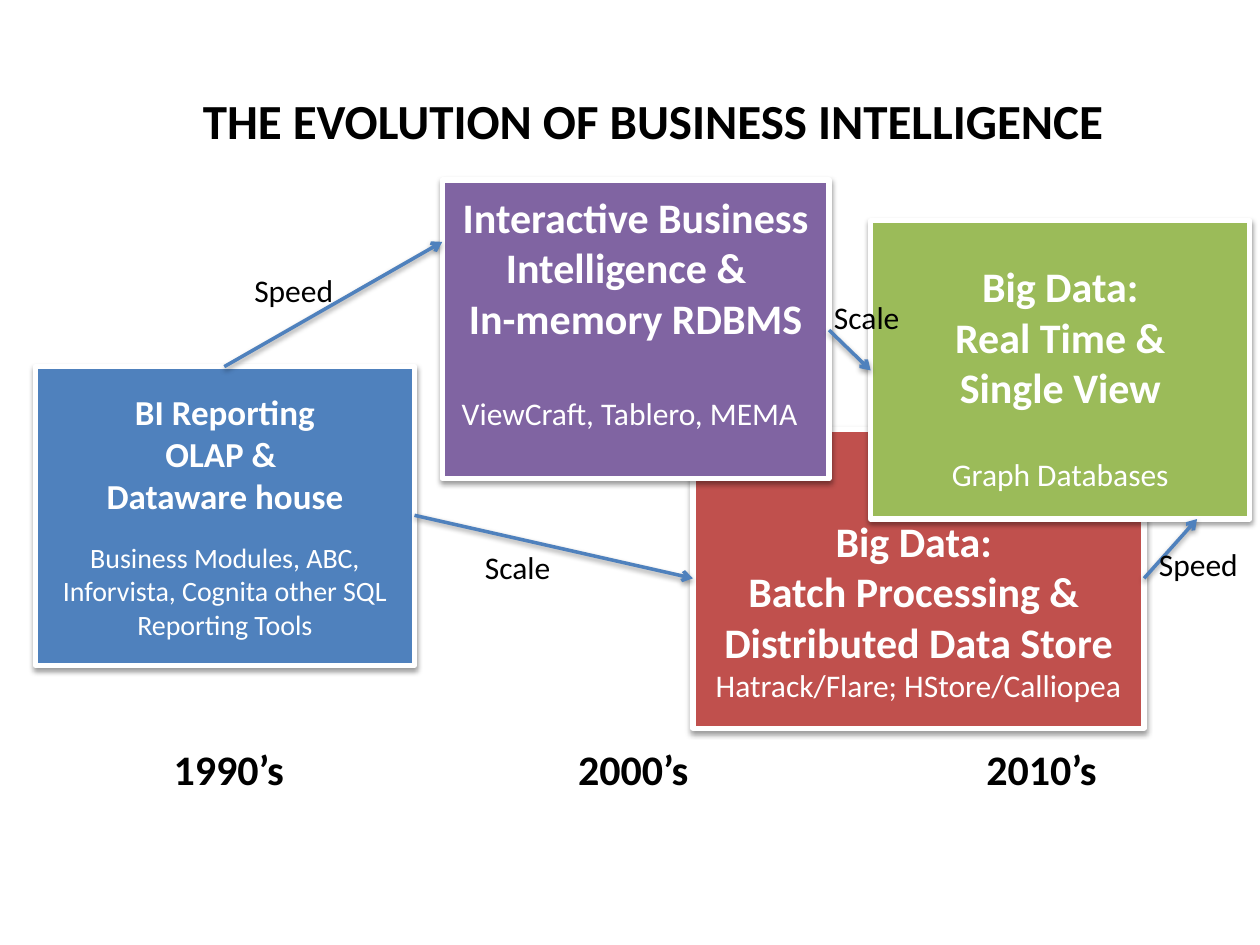
from lxml.etree import SubElement
from pptx import Presentation
from pptx.dml.color import RGBColor
from pptx.enum.shapes import MSO_CONNECTOR, MSO_SHAPE
from pptx.enum.text import MSO_ANCHOR, PP_ALIGN
from pptx.oxml.ns import qn
from pptx.util import Inches, Pt

COLORS = {
    "blue": "4F81BD", "purple": "8064A2", "red": "C0504D", "green": "9BBB59",
    "white": "FFFFFF", "black": "000000",
}
FONT = "Calibri"
BOX_HEIGHT = 2.37

# left, top, width, colour, top inset, heading size, heading lines,
# details, details size, gap above details (points), details alignment
BOXES = [
    (5.5, 3.41, 3.58, "red", 0.68, 24,
     ["Big Data: ", "Batch Processing & ", "Distributed Data Store"],
     "Hatrack/Flare; HStore/Calliopea", 18, 0, PP_ALIGN.CENTER),
    (0.28, 2.91, 3.01, "blue", 0.19, 20,
     ["BI Reporting", "OLAP & ", "Dataware house"],
     "Business Modules, ABC, Inforvista, Cognita other SQL Reporting Tools",
     16, 13.4, PP_ALIGN.CENTER),
    (3.51, 1.43, 3.07, "purple", 0.09, 24,
     ["Interactive Business Intelligence &  ", "In-memory RDBMS"],
     " ViewCraft, Tablero, MEMA", 18, 29.3, PP_ALIGN.LEFT),
    (6.91, 1.75, 3.01, "green", 0.32, 24,
     ["Big Data:", "Real Time &", "Single View"],
     "Graph Databases", 18, 24.4, PP_ALIGN.CENTER),
]
ARROWS = [
    (1.78, 2.91, 3.51, 1.92),
    (3.29, 4.09, 5.5, 4.59),
    (6.58, 2.62, 6.91, 2.94),
    (9.08, 4.59, 9.5, 4.12),
]
DECADES = [("1990’s", 1.28), ("2000’s", 4.49), ("2010’s", 7.73)]
ARROW_LABELS = [
    ("Speed", 1.92, 2.1), ("Scale", 3.75, 4.3),
    ("Scale", 6.52, 2.32), ("Speed", 9.1, 4.28),
]


def rgb(name):
    return RGBColor.from_string(COLORS[name])


def write(paragraph, text, size=18, bold=False, color="black",
          align=PP_ALIGN.LEFT, space_before=0):
    paragraph.alignment = align
    paragraph.space_before = Pt(space_before)
    run = paragraph.add_run()
    run.text = text
    run.font.name = FONT
    run.font.size = Pt(size)
    run.font.bold = bold
    run.font.color.rgb = rgb(color)


def add_shadow(properties):
    """Append a soft shadow that falls straight down."""
    effects = SubElement(properties, qn("a:effectLst"))
    shadow = SubElement(effects, qn("a:outerShdw"), blurRad="40000",
                        dist="20000", dir="5400000", rotWithShape="0")
    color = SubElement(shadow, qn("a:srgbClr"), val=COLORS["black"])
    SubElement(color, qn("a:alpha"), val="38000")


def add_box(slide, left, top, width, color, inset, heading_size, heading,
            details, details_size, gap, details_align):
    box = slide.shapes.add_shape(MSO_SHAPE.RECTANGLE, Inches(left), Inches(top),
                                 Inches(width), Inches(BOX_HEIGHT))
    box.fill.solid()
    box.fill.fore_color.rgb = rgb(color)
    box.line.color.rgb = rgb("white")
    box.line.width = Pt(3)
    add_shadow(box._element.spPr)

    frame = box.text_frame
    frame.word_wrap = True
    frame.vertical_anchor = MSO_ANCHOR.TOP
    frame.margin_top = Inches(inset)
    frame.margin_bottom = 0
    for index, line in enumerate(heading):
        paragraph = frame.add_paragraph() if index else frame.paragraphs[0]
        write(paragraph, line, size=heading_size, bold=True, color="white",
              align=PP_ALIGN.CENTER)
    write(frame.add_paragraph(), details, size=details_size, color="white",
          align=details_align, space_before=gap)


def add_arrow(slide, *ends):
    arrow = slide.shapes.add_connector(MSO_CONNECTOR.STRAIGHT,
                                       *[Inches(value) for value in ends])
    arrow.line.color.rgb = rgb("blue")
    arrow.line.width = Pt(2)
    SubElement(arrow.line._get_or_add_ln(), qn("a:tailEnd"), type="arrow")
    add_shadow(arrow._element.spPr)


def add_label(slide, text, left, top, width, height, **text_format):
    label = slide.shapes.add_textbox(Inches(left), Inches(top),
                                     Inches(width), Inches(height))
    label.text_frame.word_wrap = False
    write(label.text_frame.paragraphs[0], text, **text_format)


def add_title(slide, text):
    title = slide.shapes.title
    title.left, title.top = Inches(1.51), Inches(0.67)
    title.width, title.height = Inches(8.06), Inches(0.65)
    title.text_frame.vertical_anchor = MSO_ANCHOR.TOP
    write(title.text_frame.paragraphs[0], text, size=28, bold=True)


def main():
    presentation = Presentation()
    presentation.slide_width = Inches(10)
    presentation.slide_height = Inches(7.5)
    slide = presentation.slides.add_slide(presentation.slide_layouts[5])

    add_title(slide, "THE EVOLUTION OF BUSINESS INTELLIGENCE")
    for box in BOXES:
        add_box(slide, *box)
    for decade, left in DECADES:
        add_label(slide, decade, left, 5.85, 1.11, 0.5, size=24, bold=True)
    for arrow in ARROWS:
        add_arrow(slide, *arrow)
    for text, left, top in ARROW_LABELS:
        width = 0.83 if text == "Speed" else 0.73
        add_label(slide, text, left, top, width, 0.4)

    presentation.save("out.pptx")


if __name__ == "__main__":
    main()
